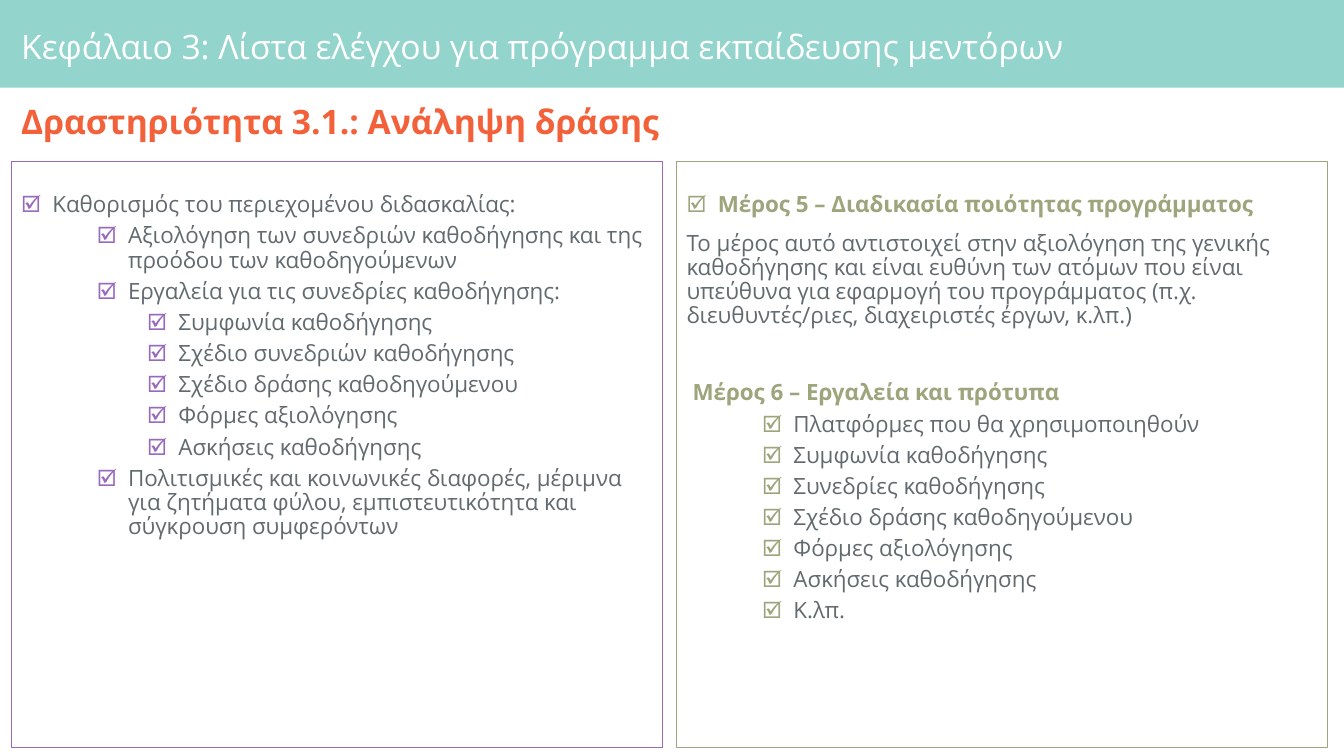
from dataclasses import dataclass
from lxml.etree import SubElement
from pptx import Presentation
from pptx.dml.color import RGBColor
from pptx.enum.shapes import MSO_SHAPE
from pptx.enum.text import MSO_ANCHOR, MSO_AUTO_SIZE, PP_ALIGN
from pptx.oxml.ns import qn
from pptx.util import Inches, Pt


@dataclass(frozen=True)
class Theme:
    font: str = "Open Sans"
    heading_size: int = 24
    list_size: int = 16
    band: str = "93D4CC"
    white: str = "FFFFFF"
    text: str = "636A6F"
    orange: str = "F2613A"
    purple: str = "9869BD"
    olive: str = "9DA57C"
    line_spacing: float = 0.9
    margin: float = 0.11
    column: float = 6.6
    gutter: float = 0.14
    hanging: float = 0.31
    level_indents: tuple = (0.31, 1.06, 1.56)


@dataclass(frozen=True)
class Item:
    text: str
    level: int = 0
    checked: bool = True
    strong: bool = False
    indent: float = 0
    space_before: int = 10


class ChecklistSlide:
    def __init__(self, deck, theme):
        self.theme = theme
        self.width, self.height = deck.slide_width, deck.slide_height
        self.slide = deck.slides.add_slide(deck.slide_layouts[4])

    def place(self, part, column, span, top, height):
        theme = self.theme
        part.left = Inches(theme.margin + column * theme.column)
        part.width = Inches(span * theme.column - theme.gutter)
        part.top, part.height = round(top * self.height), round(height * self.height)

    def style(self, paragraph, size, color, bold=False):
        paragraph.line_spacing = self.theme.line_spacing
        for run in paragraph.runs:
            run.font.name = self.theme.font
            run.font.size = Pt(size)
            run.font.bold = bold
            run.font.color.rgb = RGBColor.from_string(color)

    def mark(self, paragraph, indent, color=None):
        properties = paragraph._p.get_or_add_pPr()
        properties.set("marL", str(Inches(indent)))
        properties.set("indent", str(-Inches(self.theme.hanging) if color else 0))
        if color:
            tint = SubElement(properties, qn("a:buClr"))
            SubElement(tint, qn("a:srgbClr"), val=color)
            SubElement(properties, qn("a:buFont"), typeface=self.theme.font)
            SubElement(properties, qn("a:buChar"), char="🗹")
        else:
            SubElement(properties, qn("a:buNone"))

    def band(self, height):
        band = self.slide.shapes.add_shape(
            MSO_SHAPE.RECTANGLE, 0, 0, self.width, round(height * self.height))
        band.shadow.inherit = False
        band.fill.solid()
        band.fill.fore_color.rgb = RGBColor.from_string(self.theme.band)
        band.line.fill.background()
        self.slide.shapes._spTree.insert(2, band._element)

    def heading(self, index, text, top, height, color, bold=False):
        heading = self.slide.placeholders[index]
        self.place(heading, 0, 2, top, height)
        frame = heading.text_frame
        frame.text = text
        frame.auto_size = MSO_AUTO_SIZE.NONE
        frame.vertical_anchor = MSO_ANCHOR.MIDDLE
        paragraph = frame.paragraphs[0]
        paragraph.alignment = PP_ALIGN.LEFT
        paragraph.space_before = Pt(0)
        self.style(paragraph, self.theme.heading_size, color, bold)
        self.mark(paragraph, 0)

    def checklist(self, index, column, accent, items):
        theme = self.theme
        panel = self.slide.placeholders[index]
        self.place(panel, column, 1, 0.2133, 0.775)
        panel.line.color.rgb = RGBColor.from_string(accent)
        panel.line.width = Pt(0.75)
        frame = panel.text_frame
        frame.auto_size = MSO_AUTO_SIZE.NONE
        frame.vertical_anchor = MSO_ANCHOR.TOP
        frame.margin_top = Inches(0.32)
        frame.text = "\n".join(item.text for item in items)
        for paragraph, item in zip(frame.paragraphs, items):
            paragraph.level = item.level
            paragraph.space_before = Pt(5 if item.level else item.space_before)
            self.style(paragraph, theme.list_size,
                       accent if item.strong else theme.text, item.strong)
            if item.checked:
                self.mark(paragraph, theme.level_indents[item.level], accent)
            else:
                self.mark(paragraph, item.indent)

    def remove(self, index):
        unused = self.slide.placeholders[index]._element
        unused.getparent().remove(unused)


TEACHING_CONTENT = [
    Item("Καθορισμός του περιεχομένου διδασκαλίας:"),
    Item("Αξιολόγηση των συνεδριών καθοδήγησης και της προόδου των καθοδηγούμενων", 1),
    Item("Εργαλεία για τις συνεδρίες καθοδήγησης:", 1),
    Item("Συμφωνία καθοδήγησης", 2),
    Item("Σχέδιο συνεδριών καθοδήγησης", 2),
    Item("Σχέδιο δράσης καθοδηγούμενου", 2),
    Item("Φόρμες αξιολόγησης", 2),
    Item("Ασκήσεις καθοδήγησης", 2),
    Item("Πολιτισμικές και κοινωνικές διαφορές, μέριμνα για ζητήματα φύλου, "
         "εμπιστευτικότητα και σύγκρουση συμφερόντων", 1),
]
QUALITY_AND_TOOLS = [
    Item("Μέρος 5 – Διαδικασία ποιότητας προγράμματος", strong=True),
    Item("Το μέρος αυτό αντιστοιχεί στην αξιολόγηση της γενικής καθοδήγησης και είναι "
         "ευθύνη των ατόμων που είναι υπεύθυνα για εφαρμογή του προγράμματος (π.χ. "
         "διευθυντές/ριες, διαχειριστές έργων, κ.λπ.)", checked=False),
    Item("Μέρος 6 – Εργαλεία και πρότυπα", checked=False, strong=True,
         indent=0.06, space_before=38),
    Item("Πλατφόρμες που θα χρησιμοποιηθούν", 1),
    Item("Συμφωνία καθοδήγησης", 1),
    Item("Συνεδρίες καθοδήγησης", 1),
    Item("Σχέδιο δράσης καθοδηγούμενου", 1),
    Item("Φόρμες αξιολόγησης", 1),
    Item("Ασκήσεις καθοδήγησης", 1),
    Item("Κ.λπ.", 1),
]


def main():
    deck = Presentation()
    deck.slide_width, deck.slide_height = Inches(13.33), Inches(7.5)
    theme = Theme()
    page = ChecklistSlide(deck, theme)
    page.band(0.116)
    page.heading(0, "Κεφάλαιο 3: Λίστα ελέγχου για πρόγραμμα εκπαίδευσης μεντόρων",
                 0.012, 0.104, theme.white)
    page.heading(1, "Δραστηριότητα 3.1.: Ανάληψη δράσης", 0.124, 0.08, theme.orange, True)
    page.checklist(2, 0, theme.purple, TEACHING_CONTENT)
    page.checklist(4, 1, theme.olive, QUALITY_AND_TOOLS)
    page.remove(3)
    deck.save("out.pptx")


if __name__ == "__main__":
    main()
